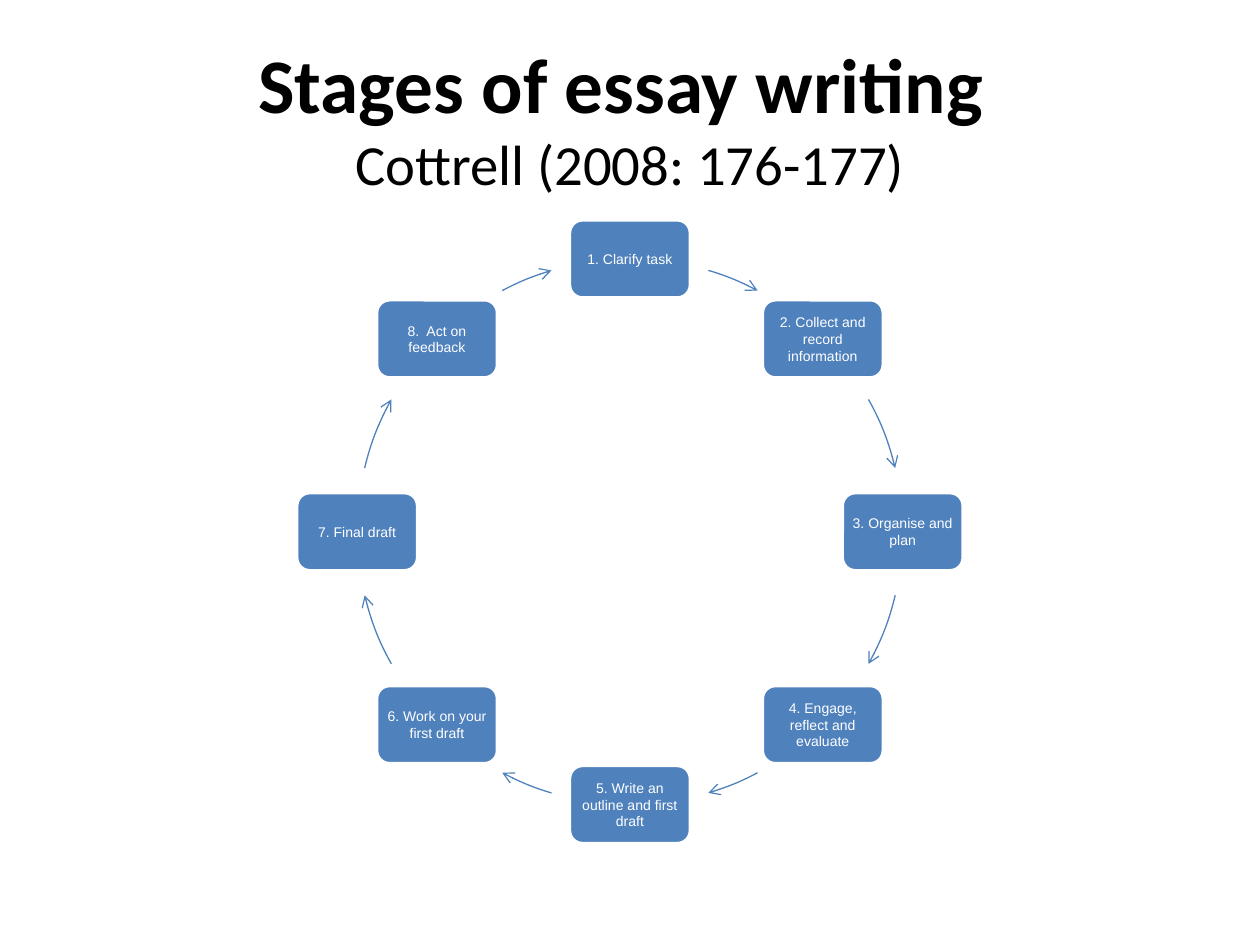
"""Build a slide showing the eight stages of essay writing as a cycle."""
import math

import lxml.etree
import pptx
import pptx.dml.color
import pptx.enum.shapes
import pptx.enum.text
import pptx.oxml.ns
import pptx.util

Inches = pptx.util.Inches
Pt = pptx.util.Pt
SHAPES = pptx.enum.shapes.MSO_SHAPE
CENTER = pptx.enum.text.PP_ALIGN.CENTER
MIDDLE = pptx.enum.text.MSO_ANCHOR.MIDDLE
COLORS = {"box": "4F81BD", "outline": "FFFFFF", "label": "FFFFFF", "title": "000000"}
STAGES = [
    ["1. Clarify task"],
    ["2. Collect and record", "information"],
    ["3. Organise and plan"],
    ["4. Engage, reflect and", "evaluate"],
    ["5. Write an outline and first draft"],
    ["6. Work on your first draft"],
    ["7. Final draft"],
    ["8.  Act on feedback"],
]
ARROW_ANGLES = [(-73.3, -62.1), (-29, -13.5), (13.5, 29), (62.1, 73.3)]
CENTER_X, CENTER_Y, RADIUS = 5, 4.22, 2.165
BOX_WIDTH, BOX_HEIGHT = 0.96, 0.62


def rgb(name):
    return pptx.dml.color.RGBColor.from_string(COLORS[name])


def add_span(para, text, color, **font_format):
    span = para.add_run()
    span.text = text
    span.font.color.rgb = rgb(color)
    for key, value in font_format.items():
        setattr(span.font, key, value)


deck = pptx.Presentation()
deck.slide_width, deck.slide_height = Inches(10), Inches(7.5)
page = deck.slides.add_slide(deck.slide_layouts[6])

title = page.shapes.add_textbox(Inches(0.5), Inches(0.3), Inches(9), Inches(1.25))
for key, value in {"word_wrap": True, "vertical_anchor": MIDDLE}.items():
    setattr(title.text_frame, key, value)
para = title.text_frame.paragraphs[0]
para.alignment = CENTER
add_span(para, "Stages of essay writing ", "title", name="Calibri", size=Pt(44.1), bold=True)
para.add_line_break()
add_span(para, "Cottrell (2008: 176-177)", "title", name="Calibri", size=Pt(32.4), bold=False)

frame_format = {"word_wrap": True, "vertical_anchor": MIDDLE}
for side in ("left", "top", "right", "bottom"):
    frame_format["margin_" + side] = Inches(0.03)

for index, lines in enumerate(STAGES):
    angle = math.radians(45 * index - 90)
    left = CENTER_X + RADIUS * math.cos(angle) - BOX_WIDTH / 2
    top = CENTER_Y + RADIUS * math.sin(angle) - BOX_HEIGHT / 2
    box = page.shapes.add_shape(
        SHAPES.ROUNDED_RECTANGLE, Inches(left), Inches(top), Inches(BOX_WIDTH), Inches(BOX_HEIGHT)
    )
    box.shadow.inherit = False
    box.fill.solid()
    box.fill.fore_color.rgb = rgb("box")
    box.line.color.rgb = rgb("outline")
    box.line.width = Pt(2)
    frame = box.text_frame
    for key, value in frame_format.items():
        setattr(frame, key, value)
    for number, line in enumerate(lines):
        para = frame.add_paragraph() if number else frame.paragraphs[0]
        para.alignment = CENTER
        add_span(para, line, "label", name="Arial", size=Pt(8))

    arrow = page.shapes.add_shape(
        SHAPES.ARC,
        Inches(CENTER_X - RADIUS),
        Inches(CENTER_Y - RADIUS),
        Inches(2 * RADIUS),
        Inches(2 * RADIUS),
    )
    arrow.shadow.inherit = False
    arrow.fill.background()
    arrow.line.color.rgb = rgb("box")
    arrow.line.width = Pt(0.75)
    half_turn = 180 * (index // 4)
    for end, degrees in enumerate(ARROW_ANGLES[index % 4]):
        arrow.adjustments[end] = (degrees + half_turn) % 360 * 0.6
    outline = arrow.line._get_or_add_ln()
    lxml.etree.SubElement(outline, pptx.oxml.ns.qn("a:tailEnd"), type="arrow")

deck.save("out.pptx")
